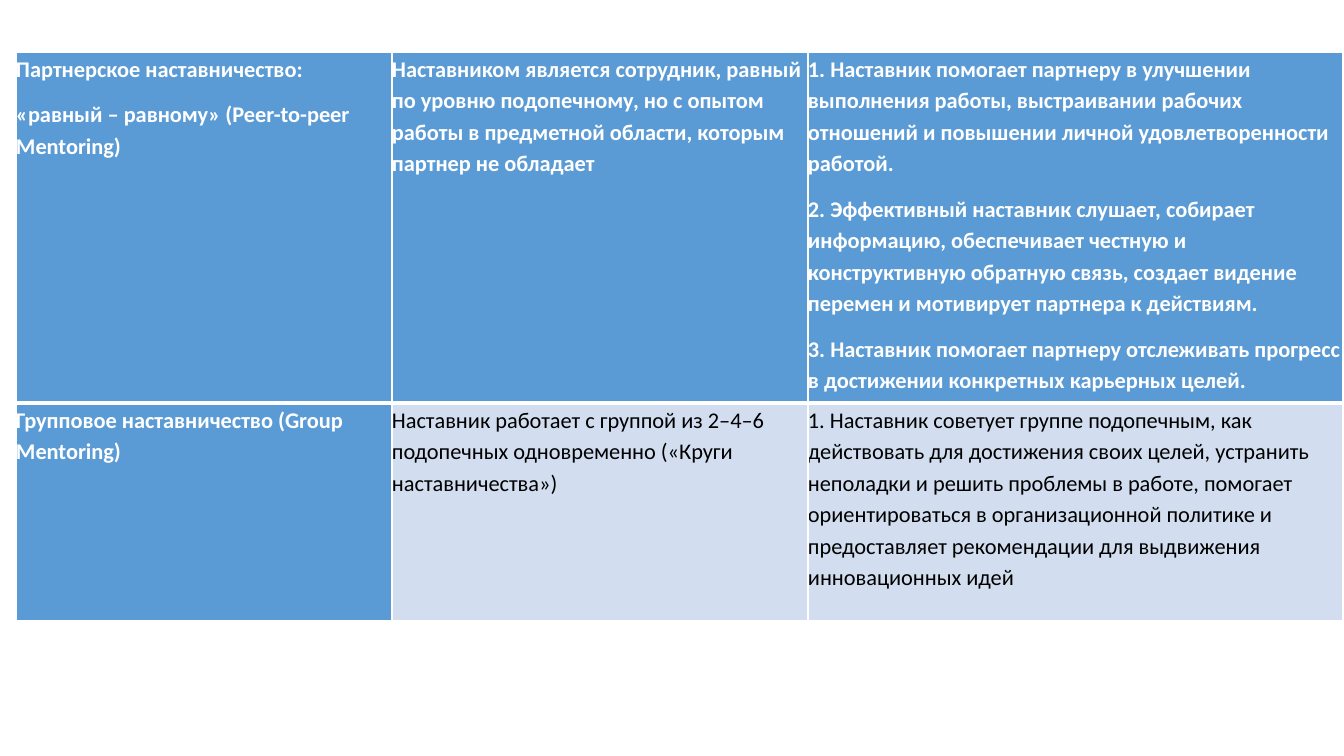
from dataclasses import dataclass

import lxml.etree
import pptx
import pptx.dml.color
import pptx.oxml.ns
import pptx.table
import pptx.util

PX_PER_INCH = 100.8
WHITE = "FFFFFF"
BLACK = "000000"
BLUE = "5B9BD5"
PALE_BLUE = "D2DEEF"
COLUMN_WIDTHS = [376, 416, 535]
ROW_HEIGHTS = [351, 218]


@dataclass(frozen=True)
class MentoringCell:
    paragraphs: list[str]
    emphasized: bool = True


MENTORING_TYPES = [
    [
        MentoringCell([
            "Партнерское наставничество:",
            "«равный – равному» (Peer-to-peer Mentoring)",
        ]),
        MentoringCell([
            "Наставником является сотрудник, равный по уровню подопечному, "
            "но с опытом работы в предметной области, которым партнер не обладает",
        ]),
        MentoringCell([
            "1. Наставник помогает партнеру в улучшении выполнения работы, "
            "выстраивании рабочих отношений и повышении личной "
            "удовлетворенности работой.",
            "2. Эффективный наставник слушает, собирает информацию, "
            "обеспечивает честную и конструктивную обратную связь, создает "
            "видение перемен и мотивирует партнера к действиям.",
            "3. Наставник помогает партнеру отслеживать прогресс в достижении "
            "конкретных карьерных целей.",
        ]),
    ],
    [
        MentoringCell(["Групповое наставничество (Group Mentoring)"]),
        MentoringCell([
            "Наставник работает с группой из 2–4–6 подопечных одновременно "
            "(«Круги наставничества»)",
        ], emphasized=False),
        MentoringCell([
            "1. Наставник советует группе подопечным, как действовать для "
            "достижения своих целей, устранить неполадки и решить проблемы в "
            "работе, помогает ориентироваться в организационной политике и "
            "предоставляет рекомендации для выдвижения инновационных идей",
        ], emphasized=False),
    ],
]


def px(length: int) -> pptx.util.Emu:
    return pptx.util.Emu(round(length * 914400 / PX_PER_INCH))


def color(value: str) -> pptx.dml.color.RGBColor:
    return pptx.dml.color.RGBColor.from_string(value)


def add_borders(cell: pptx.table._Cell, widths: dict[str, int]) -> None:
    qn = pptx.oxml.ns.qn
    properties = cell._tc.get_or_add_tcPr()
    for position, (side, width) in enumerate(widths.items()):
        border = lxml.etree.Element(qn(f"a:ln{side}"), w=str(pptx.util.Pt(width)))
        fill = lxml.etree.SubElement(border, qn("a:solidFill"))
        lxml.etree.SubElement(fill, qn("a:srgbClr"), val=WHITE)
        properties.insert(position, border)


def fill_cell(cell: pptx.table._Cell, content: MentoringCell) -> None:
    cell.margin_left = cell.margin_right = px(0)
    cell.margin_top = cell.margin_bottom = px(0)
    cell.fill.solid()
    cell.fill.fore_color.rgb = color(BLUE if content.emphasized else PALE_BLUE)
    for index, text in enumerate(content.paragraphs):
        frame = cell.text_frame
        paragraph = frame.paragraphs[0] if index == 0 else frame.add_paragraph()
        paragraph.line_spacing = 1.15
        paragraph.space_after = pptx.util.Pt(10)
        run = paragraph.add_run()
        run.text = text
        run.font.name = "Calibri"
        run.font.size = pptx.util.Pt(16)
        run.font.bold = content.emphasized
        run.font.color.rgb = color(WHITE if content.emphasized else BLACK)


def main() -> None:
    presentation = pptx.Presentation()
    presentation.slide_width = px(1344)
    presentation.slide_height = px(756)
    slide = presentation.slides.add_slide(presentation.slide_layouts[6])
    mentoring_table = slide.shapes.add_table(
        len(ROW_HEIGHTS), len(COLUMN_WIDTHS), px(16), px(52),
        px(sum(COLUMN_WIDTHS)), px(sum(ROW_HEIGHTS)),
    ).table
    for column, width in zip(mentoring_table.columns, COLUMN_WIDTHS):
        column.width = px(width)
    for row, height in zip(mentoring_table.rows, ROW_HEIGHTS):
        row.height = px(height)
    for row_index, mentoring_type in enumerate(MENTORING_TYPES):
        top, bottom = (1, 3) if row_index == 0 else (3, 1)
        for column_index, content in enumerate(mentoring_type):
            cell = mentoring_table.cell(row_index, column_index)
            fill_cell(cell, content)
            add_borders(cell, {"L": 1, "R": 1, "T": top, "B": bottom})
    presentation.save("out.pptx")


if __name__ == "__main__":
    main()
